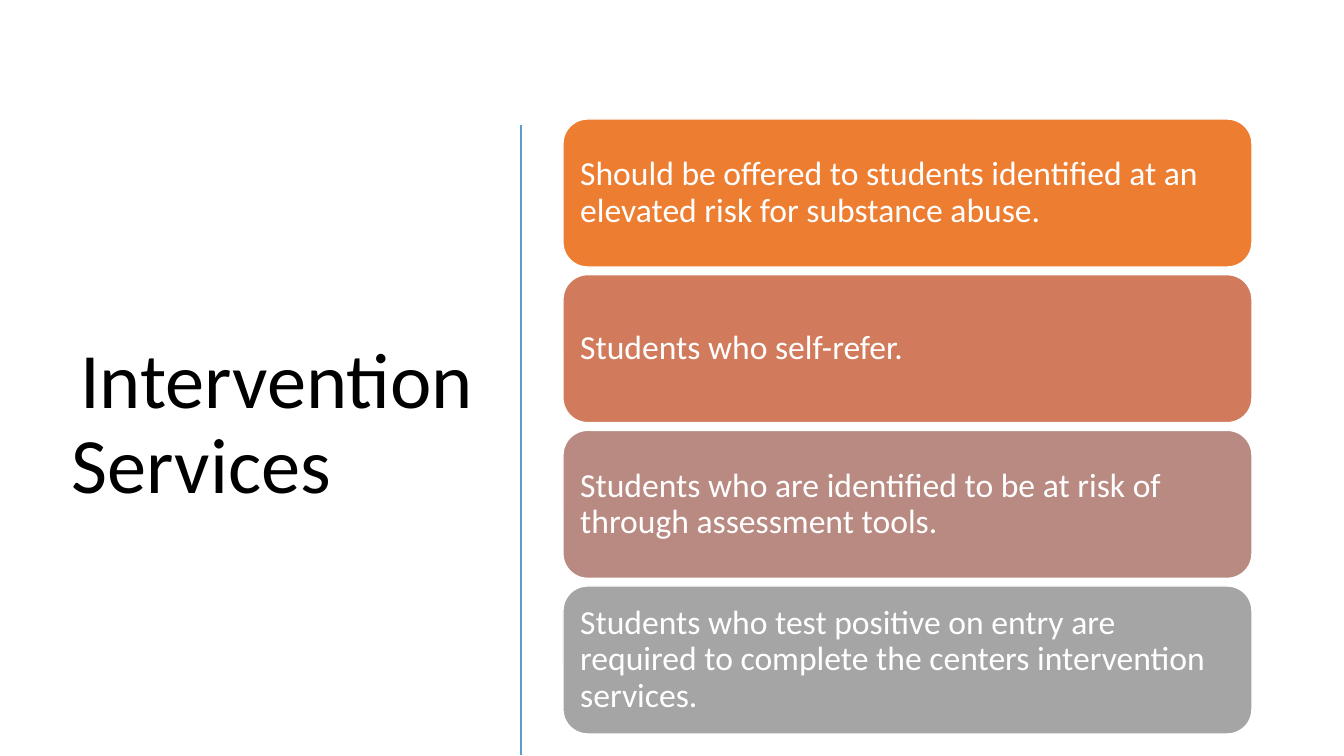
import pptx
import pptx.util
import pptx.dml.color
import pptx.enum.shapes
import pptx.enum.text
from lxml import etree

TITLE = "Intervention Services"
SERVICES = [
    ("Should be offered to students identified at an elevated risk for substance abuse.", "ED7D31"),
    ("Students who self-refer.", "D17B5C"),
    ("Students who are identified to be at risk of through assessment tools.", "B98A82"),
    ("Students who test positive on entry are required to complete the centers intervention services.",
     "A5A5A5"),
]

# Layout in px
SLIDE_W, SLIDE_H = 1344, 756
TITLE_BOX = (52, 118, 435, 616)
TITLE_INDENT = 8
DIVIDER_X, DIVIDER_TOP, DIVIDER_BOTTOM = 521, 125, 755
CARD_LEFT, CARD_W, CARD_H = 563, 689, 148
CARDS_TOP, CARDS_BOTTOM = 119, 734
CARD_PITCH = (CARDS_BOTTOM - CARDS_TOP - CARD_H) / (len(SERVICES) - 1)


def px(length):
    return pptx.util.Emu(round(length * 914400 / 100.8))


def color(hex_code):
    return pptx.dml.color.RGBColor.from_string(hex_code)


def write(shape, text, size, hex_code, left, right):
    frame = shape.text_frame
    frame_format = {
        "word_wrap": True,
        "vertical_anchor": pptx.enum.text.MSO_ANCHOR.MIDDLE,
        "margin_left": px(left),
        "margin_right": px(right),
    }
    for name, value in frame_format.items():
        setattr(frame, name, value)
    paragraph = frame.paragraphs[0]
    paragraph.text = text
    paragraph.alignment = pptx.enum.text.PP_ALIGN.LEFT
    paragraph.line_spacing = 0.9
    for name, value in {"name": "Calibri", "size": pptx.util.Pt(size)}.items():
        setattr(paragraph.runs[0].font, name, value)
    paragraph.runs[0].font.color.rgb = color(hex_code)
    return paragraph


presentation = pptx.Presentation()
presentation.slide_width, presentation.slide_height = px(SLIDE_W), px(SLIDE_H)
slide = presentation.slides.add_slide(presentation.slide_layouts[6])

# Title, with its first line slightly indented
title = slide.shapes.add_textbox(*map(px, TITLE_BOX))
heading = write(title, TITLE, 56, "000000", 20, 5)
heading._p.get_or_add_pPr().set("indent", str(px(TITLE_INDENT)))

# Divider
divider = slide.shapes.add_connector(
    pptx.enum.shapes.MSO_CONNECTOR.STRAIGHT,
    px(DIVIDER_X), px(DIVIDER_TOP), px(DIVIDER_X), px(DIVIDER_BOTTOM))
divider.line.color.rgb = color("5B9BD5")
divider.line.width = pptx.util.Pt(2)
etree.SubElement(divider._element.spPr, pptx.oxml.ns.qn("a:effectLst"))

# Service cards
for row, (service, fill) in enumerate(SERVICES):
    card = slide.shapes.add_shape(
        pptx.enum.shapes.MSO_SHAPE.ROUNDED_RECTANGLE,
        px(CARD_LEFT), px(CARDS_TOP + row * CARD_PITCH), px(CARD_W), px(CARD_H))
    card.shadow.inherit = False
    card.fill.solid()
    card.fill.fore_color.rgb = color(fill)
    card.line.color.rgb = color("FFFFFF")
    card.line.width = pptx.util.Pt(1)
    # The rounded corner already insets text by about 7 px
    write(card, service, 24, "FFFFFF", 10, 10)

presentation.save("out.pptx")
